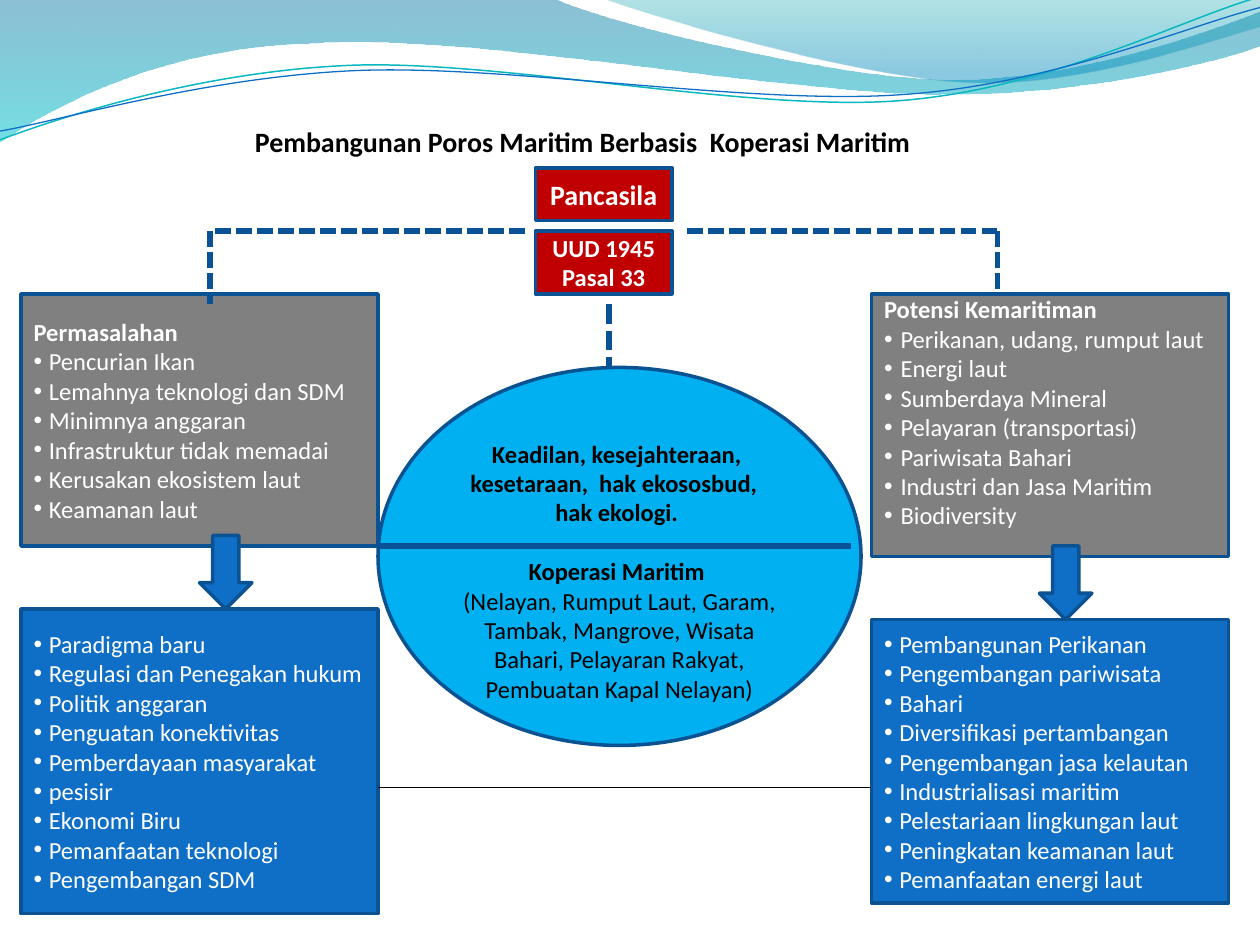
from lxml.etree import SubElement as Sub
from pptx import Presentation as Deck
from pptx.dml.color import RGBColor as RGB
from pptx.enum.dml import MSO_LINE as Dash
from pptx.enum.shapes import MSO_CONNECTOR as Link, MSO_SHAPE as Form
from pptx.enum.text import MSO_ANCHOR as Anchor, MSO_AUTO_SIZE as Fit, PP_ALIGN as Align
from pptx.oxml.ns import qn
from pptx.util import Pt

HUES = {"gray": "808080", "blue": "0F6FC6", "edge": "0B5292", "sky": "00B0F0",
        "red": "C00000", "dash": "095295", "teal": "0AB8BF", "white": "FFFFFF",
        "black": "000000", "deep": "0074A1", "aqua": "00C6CF", "sea": "00A1A9",
        "lake": "008BBF"}

TITLE = "Pembangunan Poros Maritim Berbasis  Koperasi Maritim"
LISTS = [
    ((12, 168, 204, 144), "gray", "Permasalahan",
     ["Pencurian Ikan", "Lemahnya teknologi dan SDM", "Minimnya anggaran",
      "Infrastruktur tidak memadai", "Kerusakan ekosistem laut", "Keamanan laut"], {}),
    ((12, 348, 204, 174), "blue", None,
     ["Paradigma baru", "Regulasi dan Penegakan hukum", "Politik anggaran",
      "Penguatan konektivitas", "Pemberdayaan masyarakat", "pesisir", "Ekonomi Biru",
      "Pemanfaatan teknologi", "Pengembangan SDM"], {}),
    ((498, 168, 204, 150), "gray", "Potensi Kemaritiman",
     ["Perikanan, udang, rumput laut", "Energi laut", "Sumberdaya Mineral",
      "Pelayaran (transportasi)", "Pariwisata Bahari", "Industri dan Jasa Maritim",
      "Biodiversity"], {"dent": 9.4, "margin_top": 0, "margin_bottom": Pt(15)}),
    ((498, 354, 204, 162), "blue", None,
     ["Pembangunan Perikanan", "Pengembangan pariwisata", "Bahari",
      "Diversifikasi pertambangan", "Pengembangan jasa kelautan",
      "Industrialisasi maritim", "Pelestariaan lingkungan laut",
      "Peningkatan keamanan laut", "Pemanfaatan energi laut"], {}),
]
GOALS = ["Keadilan, kesejahteraan, ", "kesetaraan,  hak ekososbud,  ", "hak ekologi. "]
COOP = "Koperasi Maritim "
KINDS = ("(Nelayan, Rumput Laut, Garam, Tambak, Mangrove, Wisata Bahari, "
         "Pelayaran Rakyat, Pembuatan Kapal Nelayan)")
BASES = [((306, 96, 78, 30), 16, ["Pancasila"]),
         ((306, 132, 78, 36), 14, ["UUD 1945", "Pasal 33"])]
ARROWS = [(114, 306, 30, 42), (594, 312, 30, 42)]
LINKS = [
    ((216, 450, 498, 450), "black", 0.75, False),
    ((300, 132, 120, 132), "dash", 3, True),
    ((570, 132, 390, 132), "dash", 3, True),
    ((120, 132, 120, 174), "dash", 3, True),
    ((570, 132, 570, 168), "dash", 3, True),
    ((348, 174, 348, 210), "dash", 3.75, True),
    ((216, 312, 486, 312), "dash", 3, False),
]
BANDS = [
    ([(0, 0), (316.8, -0.7), (342.7, 12.2, 478.1, 45.4, 545.8, 45.4),
      (614.2, 45.4, 689.8, 18.7, 720, 6.5), (720.7, 25.9),
      (707.8, 31.7, 626.4, 54.7, 537.1, 54), (447.8, 54, 275, 20.2, 185, 24.5),
      (92.9, 25.9, 33.1, 59.8, -0.7, 81.4)],
     [("deep", 0, 45), ("aqua", 100, 55)]),
    ([(344.9, -0.7), (366.5, 7.9, 491, 44.6, 553.7, 46.8),
      (616.3, 49.7, 691.9, 23, 720, 15.1), (720, 0)],
     [("sea", 0, 30), ("lake", 80, 45)]),
]
WAVES = [
    ([(0, 79.9), (34.6, 67, 113.8, 41, 199.4, 37.4),
      (284.4, 33.8, 427, 64.1, 513.4, 57.6),
      (599.8, 51.1, 675.4, 10.8, 718.6, -1.4)], "teal", 0.85),
    ([(0, 74.9), (33.8, 69.1, 118.1, 43.9, 203.8, 40.3),
      (290.2, 36.7, 429.8, 60.5, 516.2, 54),
      (601.9, 48.2, 677.5, 15.1, 720, 4.3)], "blue", 0.75),
]


def hue(name):
    """Return the named colour."""
    return RGB.from_string(HUES[name])


def put(obj, form):
    """Set each attribute in form on obj."""
    for key, val in form.items():
        setattr(obj, key, val)


def place(shape, box):
    """Move and size a shape."""
    put(shape, dict(zip(("left", "top", "width", "height"), map(Pt, box))))


def paint(shape, fill, edge="edge", wide=2):
    """Fill and outline a shape."""
    shape.fill.solid()
    shape.fill.fore_color.rgb = hue(fill)
    shape.line.color.rgb = hue(edge)
    shape.line.width = Pt(wide)


def write(shape, rows, tone, align=Align.CENTER, size=14, dent=8.7, **form):
    """Write (text, bold, bullet, gap) rows into a shape."""
    frame = shape.text_frame
    put(frame, {"word_wrap": True, "auto_size": Fit.NONE,
                "vertical_anchor": Anchor.MIDDLE, **form})
    for n, (text, bold, mark, gap) in enumerate(rows):
        para = frame.add_paragraph() if n else frame.paragraphs[0]
        put(para, {"alignment": align, "space_before": Pt(gap), "space_after": Pt(0)})
        run = para.add_run()
        run.text = text
        put(run.font, {"name": "Calibri", "size": Pt(size), "bold": bold})
        run.font.color.rgb = hue(tone)
        props = para._p.get_or_add_pPr()
        inset = Pt(dent) if mark else 0
        props.set("marL", str(inset))
        props.set("indent", str(-inset))
        if mark:
            Sub(props, qn("a:buChar"), char="•")
        else:
            Sub(props, qn("a:buNone"))


def draw(shapes, steps, close):
    """Draw a freeform of lines and cubic curves."""
    dots = [(Pt(s[i]), Pt(s[i + 1])) for s in steps for i in range(0, len(s), 2)]
    pen = shapes.build_freeform(*dots[0])
    pen.add_line_segments(dots[1:], close=close)
    shape = pen.convert_to_shape()
    shape.shadow.inherit = False
    legs = iter(list(shape._element.iter(qn("a:lnTo"))))
    for step in steps[1:]:
        leg = next(legs)
        if len(step) == 6:
            leg.tag = qn("a:cubicBezTo")
            for more in (next(legs), next(legs)):
                leg.append(more[0])
                more.getparent().remove(more)
    return shape


def add(shapes, form, box, fill):
    """Add a painted preset shape."""
    shape = shapes.add_shape(form, *map(Pt, box))
    shape.shadow.inherit = False
    paint(shape, fill)
    return shape


def main():
    """Build the slide and save it."""
    deck = Deck()
    put(deck, {"slide_width": Pt(720), "slide_height": Pt(540)})
    slide = deck.slides.add_slide(deck.slide_layouts.get_by_name("Comparison"))
    shapes = slide.shapes
    title, *bodies = slide.placeholders

    for steps, stops in BANDS:
        band = draw(shapes, steps, True)
        band.line.fill.background()
        band.fill.gradient()
        band.fill.gradient_angle = 270
        nodes = band._element.iter(qn("a:gs"))
        for stop, node, (name, pos, alpha) in zip(band.fill.gradient_stops, nodes, stops):
            stop.color.rgb = hue(name)
            node.set("pos", str(pos * 1000))
            Sub(node[0], qn("a:alpha"), val=str(alpha * 1000))
    for steps, name, wide in WAVES:
        wave = draw(shapes, steps, False)
        wave.fill.background()
        wave.line.color.rgb = hue(name)
        wave.line.width = Pt(wide)

    place(title, (126, 66, 414, 30))
    write(title, [(TITLE, True, False, 0)], "black", size=16)
    for body, (box, fill, head, items, form) in zip(bodies, LISTS):
        place(body, box)
        paint(body, fill)
        rows = [(head, True, False, 0)] if head else []
        rows += [(item, False, True, 0) for item in items]
        write(body, rows, "white", Align.LEFT, **form)

    oval = add(shapes, Form.OVAL, (216, 210, 276, 216), "sky")
    rows = [(goal, True, False, 0) for goal in GOALS]
    rows += [(COOP, True, False, 16.8), (KINDS, False, False, 0)]
    write(oval, rows, "black", vertical_anchor=Anchor.TOP, margin_top=Pt(9))
    for box, size, texts in BASES:
        base = add(shapes, Form.RECTANGLE, box, "red")
        write(base, [(text, True, False, 0) for text in texts], "white", size=size,
              margin_top=0, margin_bottom=0)
    for box in ARROWS:
        add(shapes, Form.DOWN_ARROW, box, "blue")
    for ends, name, wide, dashed in LINKS:
        link = shapes.add_connector(Link.STRAIGHT, *map(Pt, ends))
        put(link.line, {"width": Pt(wide)})
        link.line.color.rgb = hue(name)
        if dashed:
            link.line.dash_style = Dash.SQUARE_DOT
        Sub(link._element.spPr, qn("a:effectLst"))
    deck.save("out.pptx")


if __name__ == "__main__":
    main()
